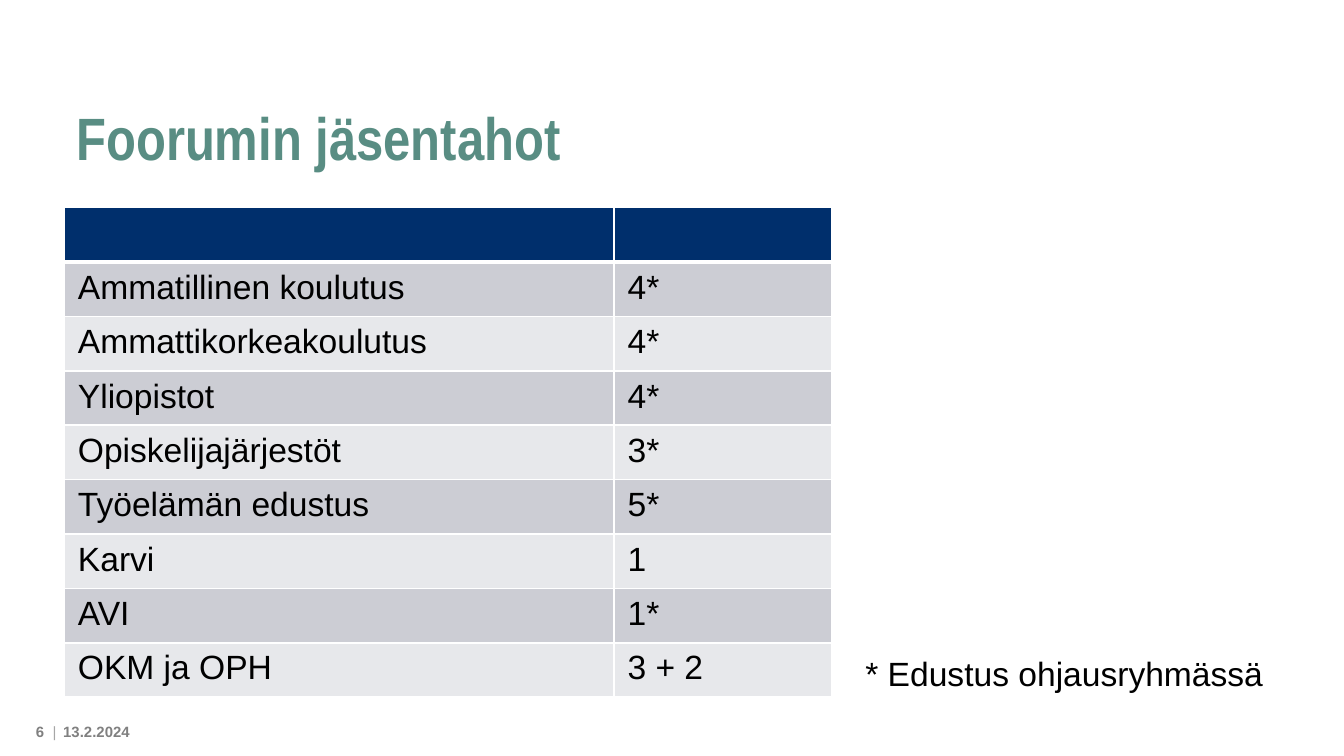
from dataclasses import dataclass

from lxml import etree
from pptx import Presentation
from pptx.dml.color import RGBColor
from pptx.enum.text import MSO_ANCHOR, MSO_AUTO_SIZE, PP_ALIGN
from pptx.oxml.ns import qn
from pptx.slide import Slide
from pptx.table import _Cell
from pptx.text.text import _Paragraph
from pptx.util import Emu, Pt

TOP, MIDDLE, BOTTOM = MSO_ANCHOR.TOP, MSO_ANCHOR.MIDDLE, MSO_ANCHOR.BOTTOM
LEFT, RIGHT = PP_ALIGN.LEFT, PP_ALIGN.RIGHT
FIT_SHAPE = MSO_AUTO_SIZE.SHAPE_TO_FIT_TEXT
EMU_PER_PX = 4572  # 200 px to the inch
BLANK_LAYOUT = 6


@dataclass(frozen=True)
class Theme:
    title_color: str = "598D83"
    text_color: str = "000000"
    footer_color: str = "808080"
    divider_color: str = "A6A6A6"
    header_fill: str = "002F6C"
    band_fills: tuple[str, str] = ("CCCDD4", "E7E8EB")
    border_color: str = "FFFFFF"
    title_font: str = "Arial Narrow"
    body_font: str = "Arial"
    title_size: int = 32
    body_size: int = 18
    footer_size: int = 8
    thin_border: int = 1
    header_border: int = 3


THEME = Theme()


@dataclass(frozen=True)
class Span:
    text: str
    size: int = THEME.body_size
    color: str = THEME.text_color
    bold: bool = False
    font: str = THEME.body_font
    tracking: int = 0  # hundredths of a point


@dataclass(frozen=True)
class TextBox:
    left: int
    top: int
    width: int
    height: int
    spans: tuple[Span, ...]
    anchor: MSO_ANCHOR = MIDDLE
    align: PP_ALIGN = LEFT
    insets: tuple[int, int, int, int] = (20, 10, 20, 10)
    wrap: bool = True


@dataclass(frozen=True)
class Member:
    name: str
    seats: str


MEMBERS = (
    Member("Ammatillinen koulutus", "4*"),
    Member("Ammattikorkeakoulutus", "4*"),
    Member("Yliopistot", "4*"),
    Member("Opiskelijajärjestöt", "3*"),
    Member("Työelämän edustus", "5*"),
    Member("Karvi", "1"),
    Member("AVI", "1*"),
    Member("OKM ja OPH", "3 + 2"),
)
TABLE_LEFT, TABLE_TOP = 96, 309
COLUMN_WIDTHS = (818, 324)
ROW_HEIGHT = 81

TITLE = TextBox(
    94, 52, 1798, 214,
    (Span("Foorumin jäsentahot", THEME.title_size, THEME.title_color, True,
          THEME.title_font),),
    anchor=BOTTOM,
)
PAGE_NUMBER = TextBox(
    0, 1066, 88, 44,
    (
        Span("6", THEME.footer_size, THEME.footer_color, True),
        Span(" ", THEME.footer_size, THEME.footer_color, True, tracking=220),
        Span("|", THEME.footer_size, THEME.divider_color),
    ),
    align=RIGHT,
    insets=(20, 10, 4, 10),
)
DATE = TextBox(
    94, 1066, 150, 44,
    (Span("13.2.2024", THEME.footer_size, THEME.footer_color, True),),
    insets=(0, 0, 0, 0),
)
FOOTNOTE = TextBox(
    1268, 962, 638, 80, (Span("* Edustus ohjausryhmässä"),),
    anchor=TOP, wrap=False,
)


def px(length: int) -> Emu:
    return Emu(length * EMU_PER_PX)


def add_span(para: _Paragraph, span: Span) -> None:
    run = para.add_run()
    run.text = span.text
    run.font.name = span.font
    run.font.size = Pt(span.size)
    run.font.bold = span.bold
    run.font.color.rgb = RGBColor.from_string(span.color)
    if span.tracking:
        run.font._element.set("spc", str(span.tracking))


def add_text_box(page: Slide, item: TextBox) -> None:
    box = page.shapes.add_textbox(
        px(item.left), px(item.top), px(item.width), px(item.height))
    frame = box.text_frame
    frame.word_wrap = item.wrap
    if not item.wrap:
        frame.auto_size = FIT_SHAPE
    frame.vertical_anchor = item.anchor
    (frame.margin_left, frame.margin_top,
     frame.margin_right, frame.margin_bottom) = map(px, item.insets)
    para = frame.paragraphs[0]
    para.alignment = item.align
    for span in item.spans:
        add_span(para, span)


def style_cell(cell: _Cell, fill: str, top: int, bottom: int) -> None:
    """Set the fill and the four borders; top and bottom are widths in points."""
    properties = cell._tc.get_or_add_tcPr()
    thin = THEME.thin_border
    for side, width in (("L", thin), ("R", thin), ("T", top), ("B", bottom)):
        line = etree.SubElement(properties, qn(f"a:ln{side}"), w=str(Pt(width)))
        paint = etree.SubElement(line, qn("a:solidFill"))
        etree.SubElement(paint, qn("a:srgbClr"), val=THEME.border_color)
    cell.fill.solid()
    cell.fill.fore_color.rgb = RGBColor.from_string(fill)


def add_member_table(page: Slide, members: tuple[Member, ...]) -> None:
    row_count = len(members) + 1
    table = page.shapes.add_table(
        row_count, len(COLUMN_WIDTHS), px(TABLE_LEFT), px(TABLE_TOP),
        px(sum(COLUMN_WIDTHS)), px(ROW_HEIGHT * row_count)).table
    table.horz_banding = False
    for column, width in zip(table.columns, COLUMN_WIDTHS):
        column.width = px(width)
    for row in table.rows:
        row.height = px(ROW_HEIGHT)

    thin, thick = THEME.thin_border, THEME.header_border
    for cell in table.rows[0].cells:
        style_cell(cell, THEME.header_fill, thin, thick)
    for index, member in enumerate(members):
        fill = THEME.band_fills[index % 2]
        top = thin if index else thick
        cells = table.rows[index + 1].cells
        for cell, text in zip(cells, (member.name, member.seats)):
            style_cell(cell, fill, top, thin)
            add_span(cell.text_frame.paragraphs[0], Span(text))


def main() -> None:
    deck = Presentation()
    deck.slide_width, deck.slide_height = px(2000), px(1125)
    page = deck.slides.add_slide(deck.slide_layouts[BLANK_LAYOUT])
    add_text_box(page, TITLE)
    add_member_table(page, MEMBERS)
    for item in (PAGE_NUMBER, DATE, FOOTNOTE):
        add_text_box(page, item)
    deck.save("out.pptx")


if __name__ == "__main__":
    main()
